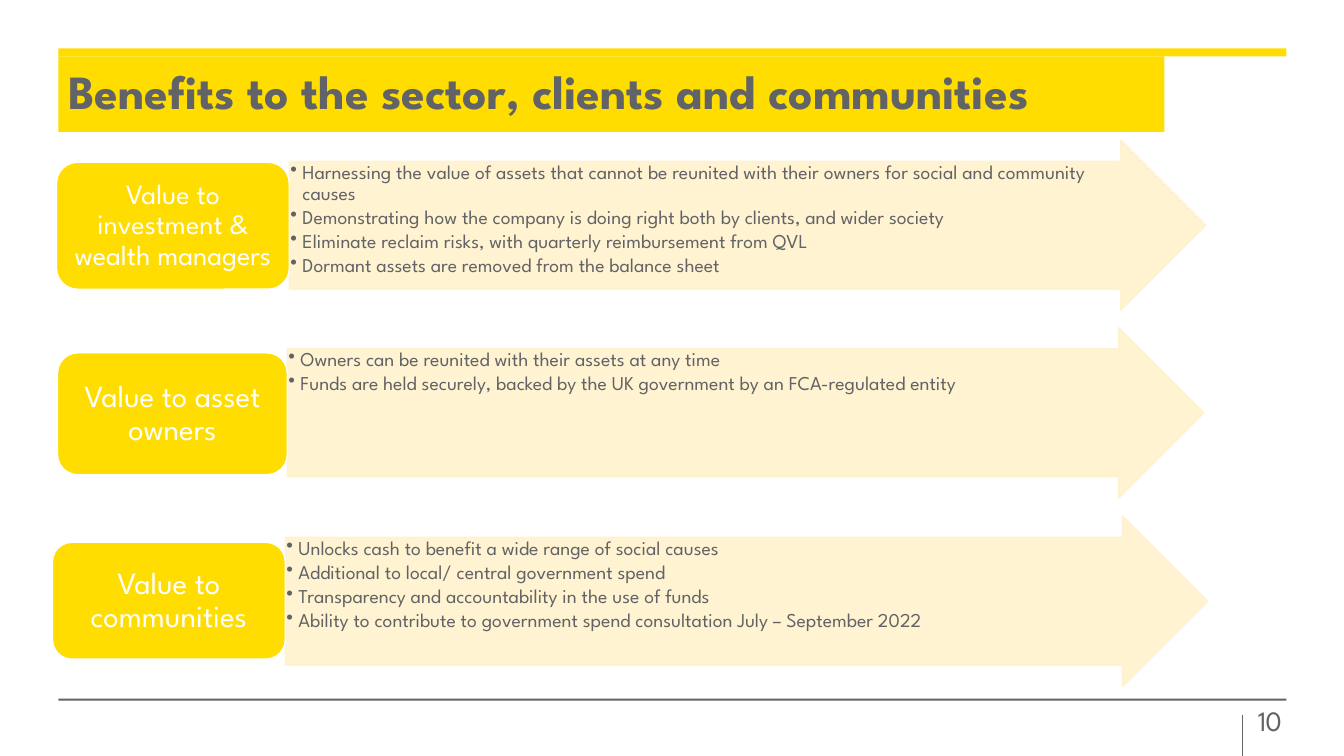
from dataclasses import dataclass
from lxml.etree import SubElement
from pptx import Presentation
from pptx.dml.color import RGBColor
from pptx.enum.shapes import MSO_CONNECTOR, MSO_SHAPE
from pptx.enum.text import MSO_ANCHOR, PP_ALIGN
from pptx.oxml.ns import qn
from pptx.util import Pt

TITLE = "Benefits to the sector, clients and communities"
NUMBER = "10"
ROWS = [
    {
        "label": "Value to investment & wealth managers",
        "size": 20,
        "card": (56, 161, 231, 126),
        "arrow": (287, 139, 909, 169),
        "points": [
            "Harnessing the value of assets that cannot be reunited with their owners for social and community causes",
            "Demonstrating how the company is doing right both by clients, and wider society",
            "Eliminate reclaim risks, with quarterly reimbursement from QVL",
            "Dormant assets are removed from the balance sheet",
        ],
    },
    {
        "label": "Value to asset owners",
        "size": 22,
        "card": (57, 350, 228, 121),
        "arrow": (285, 325, 909, 169),
        "points": [
            "Owners can be reunited with their assets at any time",
            "Funds are held securely, backed by the UK government by an FCA-regulated entity",
        ],
    },
    {
        "label": "Value to communities",
        "size": 22,
        "card": (52, 538, 231, 116),
        "arrow": (283, 512, 915, 169),
        "points": [
            "Unlocks cash to benefit a wide range of social causes",
            "Additional to local/ central government spend",
            "Transparency and accountability in the use of funds",
            "Ability to contribute to government spend consultation July – September 2022",
        ],
    },
]


@dataclass(frozen=True)
class Theme:
    font: str = "League Spartan"
    yellow: str = "FFDD00"
    cream: str = "FFF2CC"
    grey: str = "626366"
    white: str = "FFFFFF"
    title: int = 34
    body: int = 14
    page: int = 20


THEME = Theme()
SCALE = 9144
LEFT, WIDE = 58, 1218


def px(*sizes):
    return [size * SCALE for size in sizes]


def paint(fill, color, alpha=None):
    fill.solid()
    fill.fore_color.rgb = RGBColor.from_string(color)
    if alpha:
        tone = fill._xPr.find(qn("a:solidFill"))[0]
        SubElement(tone, qn("a:alpha"), val=str(alpha * 1000))


def block(slide, kind, box, color, edge=None, alpha=None):
    shape = slide.shapes.add_shape(kind, *px(*box))
    shape.shadow.inherit = False
    paint(shape.fill, color, alpha)
    if edge:
        shape.line.width = Pt(1)
        paint(shape.line.fill, edge, alpha)
    else:
        shape.line.fill.background()
    return shape


def write(shape, lines, size, color, pads, align=PP_ALIGN.LEFT,
          anchor=MSO_ANCHOR.MIDDLE, bold=False, wrap=True, lead=0.9, gap=0):
    frame = shape.text_frame
    frame.word_wrap = wrap
    frame.vertical_anchor = anchor
    (frame.margin_left, frame.margin_top,
     frame.margin_right, frame.margin_bottom) = px(*pads)
    frame.text = "\n".join(lines)
    for para in frame.paragraphs:
        para.alignment = align
        para.line_spacing = lead
        para.space_before = Pt(0)
        para.space_after = Pt(gap)
        para.font.name = THEME.font
        para.font.size = Pt(size)
        para.font.bold = bold
        para.font.color.rgb = RGBColor.from_string(color)
    return frame


def bullet(para):
    props = para._p.get_or_add_pPr()
    indent = px(12)[0]
    props.set("marL", str(indent))
    props.set("indent", str(-indent))
    mark = props.makeelement(qn("a:buChar"), {"char": "•"})
    props.insert_element_before(mark, "a:tabLst", "a:defRPr", "a:extLst")


def band(slide, row):
    arrow = block(slide, MSO_SHAPE.RIGHT_ARROW, row["arrow"],
                  THEME.cream, THEME.cream, 90)
    arrow.adjustments[0] = 0.75
    arrow.adjustments[1] = 0.5
    frame = write(arrow, row["points"], THEME.body, THEME.grey, (1, 1, 44, 1),
                  anchor=MSO_ANCHOR.TOP, gap=2)
    for para in frame.paragraphs:
        bullet(para)
    card = block(slide, MSO_SHAPE.ROUNDED_RECTANGLE, row["card"],
                 THEME.yellow, THEME.white)
    write(card, [row["label"]], row["size"], THEME.white, (8, 4, 8, 4),
          align=PP_ALIGN.CENTER)


def footer(slide):
    rule = slide.shapes.add_connector(
        MSO_CONNECTOR.STRAIGHT, *px(1232, 709, 1232, 750))
    rule.line.width = Pt(0.5)
    paint(rule.line.fill, THEME.grey)
    SubElement(rule._element.spPr, qn("a:effectLst"))
    page = slide.shapes.add_textbox(*px(1230, 695, 59, 40))
    frame = write(page, [NUMBER], THEME.page, THEME.grey, (10, 5, 10, 5),
                  align=PP_ALIGN.CENTER, lead=1.0)
    frame.paragraphs[0].runs[0]._r.get_or_add_rPr().set("spc", "-50")


def main():
    deck = Presentation()
    deck.slide_width, deck.slide_height = px(1333, 750)
    slide = deck.slides.add_slide(deck.slide_layouts[6])
    block(slide, MSO_SHAPE.RECTANGLE, (LEFT, 48, WIDE, 8), THEME.yellow)
    block(slide, MSO_SHAPE.RECTANGLE, (LEFT, 693, WIDE, 2), THEME.grey)
    footer(slide)
    head = block(slide, MSO_SHAPE.RECTANGLE, (LEFT, 56, 1097, 75), THEME.yellow)
    write(head, [TITLE], THEME.title, THEME.grey, (10, 12, 20, 12),
          bold=True, wrap=False)
    for row in ROWS:
        band(slide, row)
    deck.save("out.pptx")


if __name__ == "__main__":
    main()
